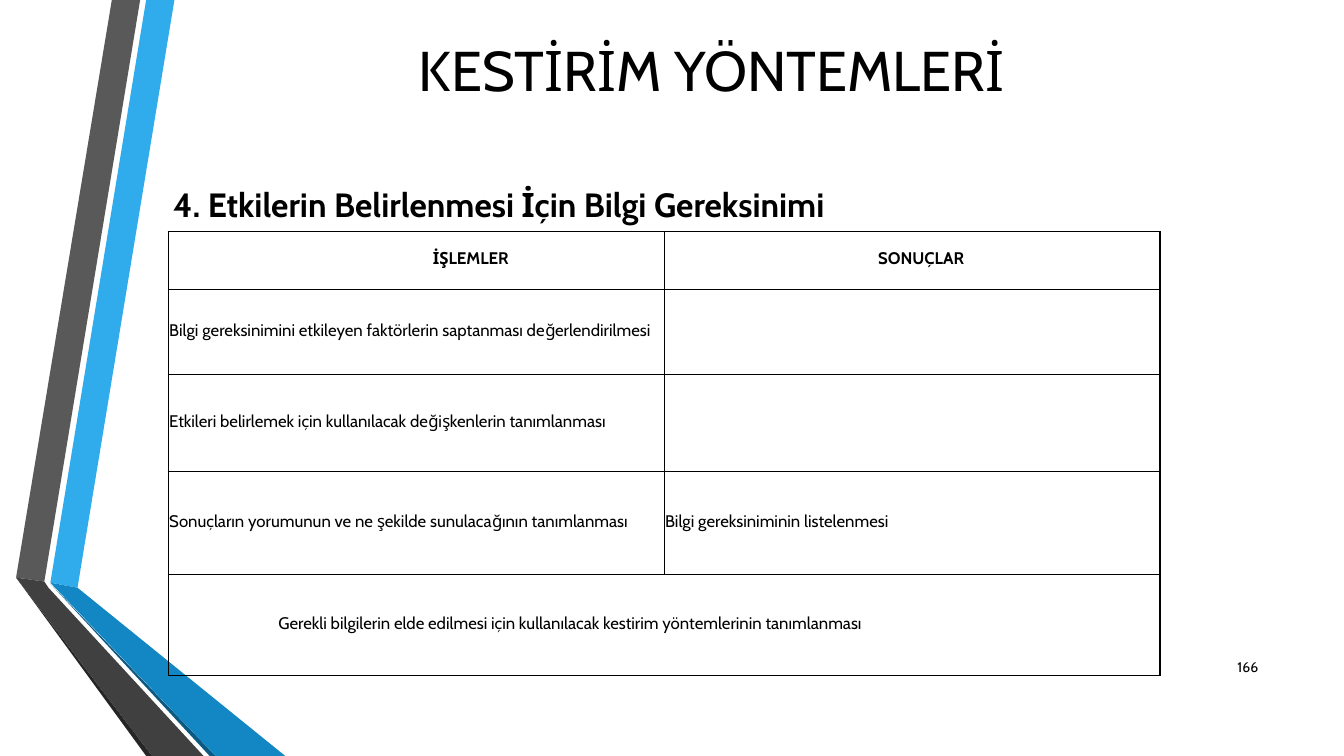
from dataclasses import dataclass

from lxml import etree
from pptx import Presentation
from pptx.dml.color import RGBColor
from pptx.enum.text import MSO_ANCHOR, PP_ALIGN
from pptx.oxml.ns import qn
from pptx.slide import Slide
from pptx.table import _Cell
from pptx.text.text import _Paragraph
from pptx.util import Pt

MIDDLE = MSO_ANCHOR.MIDDLE
LEFT, CENTER, RIGHT = PP_ALIGN.LEFT, PP_ALIGN.CENTER, PP_ALIGN.RIGHT
JUSTIFY = PP_ALIGN.JUSTIFY

BLACK = RGBColor(0x00, 0x00, 0x00)
SKY = RGBColor(0x30, 0xAC, 0xEC)
BLUE = RGBColor(0x12, 0x87, 0xC3)
NAVY = RGBColor(0x0C, 0x5A, 0x82)
GRAY = RGBColor(0x59, 0x59, 0x59)
CHARCOAL = RGBColor(0x40, 0x40, 0x40)
DARK = RGBColor(0x26, 0x26, 0x26)

FONT = "Cabin"
SLIDE_WIDTH, SLIDE_HEIGHT = 960, 540
TABLE_LEFT, TABLE_TOP = 120.2, 165.6
COLUMN_WIDTH = 354.2
ROW_HEIGHTS = [41, 61.2, 69.1, 73.4, 72]
CELL_INSET = 0.7


@dataclass(frozen=True)
class Ribbon:
    color: RGBColor
    points: list[tuple[float, float]]


@dataclass(frozen=True)
class Label:
    text: str
    left: float
    top: float
    width: float
    height: float
    size: float
    align: PP_ALIGN = LEFT
    bold: bool = False


@dataclass(frozen=True)
class Entry:
    row: int
    column: int
    text: str
    align: PP_ALIGN = LEFT
    indent: float = 0
    line: float = 12.2
    bold: bool = False


RIBBONS = [
    Ribbon(SKY, [(36, 416.2), (55.4, 419.8), (124.6, 0), (104.4, 0)]),
    Ribbon(GRAY, [(100.1, 0), (79.9, 0), (11.5, 412.6), (31.7, 415.4)]),
    Ribbon(DARK, [(11.5, 412.6), (104.4, 540), (108.7, 540)]),
    Ribbon(NAVY, [(36, 416.9), (149.8, 540), (154.1, 540)]),
    Ribbon(BLUE, [(36, 416.2), (154.1, 540), (203.8, 540), (55.4, 419.8)]),
    Ribbon(CHARCOAL, [(145.4, 540), (34.6, 419.8), (31.7, 415.4),
                      (11.5, 412.6), (108.7, 540)]),
]

LABELS = [
    Label("KESTİRİM YÖNTEMLERİ", 113.8, 18.7, 789.1, 61.2, 40, CENTER),
    Label("4. Etkilerin Belirlenmesi İçin Bilgi Gereksinimi",
          116.6, 127, 789.1, 38, 24, bold=True),
    Label("166", 862.6, 462.2, 43.2, 28.8, 10, RIGHT),
]

ENTRIES = [
    Entry(0, 0, "İŞLEMLER", CENTER, 78, bold=True),
    Entry(0, 1, "SONUÇLAR", CENTER, 13, bold=True),
    Entry(1, 0, "Bilgi gereksinimini etkileyen faktörlerin saptanması "
          "değerlendirilmesi", JUSTIFY, line=12),
    Entry(2, 0, "Etkileri belirlemek için kullanılacak değişkenlerin "
          "tanımlanması", JUSTIFY, line=12),
    Entry(3, 0, "Sonuçların yorumunun ve ne şekilde sunulacağının "
          "tanımlanması", JUSTIFY, line=12.5),
    Entry(3, 1, "Bilgi gereksiniminin listelenmesi"),
    Entry(4, 0, "Gerekli bilgilerin elde edilmesi için kullanılacak kestirim "
          "yöntemlerinin tanımlanması", indent=78),
]


def style_paragraph(paragraph: _Paragraph, text: str, size: float,
                    align: PP_ALIGN, bold: bool) -> None:
    paragraph.text = text
    paragraph.alignment = align
    paragraph.font.name = FONT
    paragraph.font.size = Pt(size)
    paragraph.font.bold = bold
    paragraph.font.color.rgb = BLACK


def add_ribbon(slide: Slide, ribbon: Ribbon) -> None:
    start, *rest = [(Pt(x), Pt(y)) for x, y in ribbon.points]
    builder = slide.shapes.build_freeform(*start)
    builder.add_line_segments(rest, close=True)
    shape = builder.convert_to_shape()
    shape.shadow.inherit = False
    shape.fill.solid()
    shape.fill.fore_color.rgb = ribbon.color
    shape.line.fill.background()


def add_label(slide: Slide, label: Label) -> None:
    box = slide.shapes.add_textbox(Pt(label.left), Pt(label.top),
                                   Pt(label.width), Pt(label.height))
    frame = box.text_frame
    frame.word_wrap = True
    frame.vertical_anchor = MIDDLE
    style_paragraph(frame.paragraphs[0], label.text, label.size,
                    label.align, label.bold)


def style_cell(cell: _Cell) -> None:
    cell.fill.background()
    cell.vertical_anchor = MIDDLE
    cell.margin_left = cell.margin_right = Pt(CELL_INSET)
    cell.margin_top = cell.margin_bottom = 0
    # Borders come before the fill in the cell properties
    properties = cell._tc.get_or_add_tcPr()
    for position, side in enumerate(("a:lnL", "a:lnR", "a:lnT", "a:lnB")):
        border = etree.Element(qn(side), w=str(Pt(1)))
        fill = etree.SubElement(border, qn("a:solidFill"))
        etree.SubElement(fill, qn("a:srgbClr"), val=str(BLACK))
        properties.insert(position, border)


def add_process_table(slide: Slide) -> None:
    frame = slide.shapes.add_table(
        len(ROW_HEIGHTS), 2, Pt(TABLE_LEFT), Pt(TABLE_TOP),
        Pt(2 * COLUMN_WIDTH), Pt(sum(ROW_HEIGHTS)))
    table = frame.table
    table.first_row = table.horz_banding = False
    for column in table.columns:
        column.width = Pt(COLUMN_WIDTH)
    for row, height in zip(table.rows, ROW_HEIGHTS):
        row.height = Pt(height)
        for cell in row.cells:
            style_cell(cell)
    table.cell(4, 0).merge(table.cell(4, 1))
    for entry in ENTRIES:
        cell = table.cell(entry.row, entry.column)
        cell.margin_left = Pt(CELL_INSET + entry.indent)
        paragraph = cell.text_frame.paragraphs[0]
        style_paragraph(paragraph, entry.text, 12, entry.align, entry.bold)
        paragraph.line_spacing = Pt(entry.line)


def main() -> None:
    presentation = Presentation()
    presentation.slide_width = Pt(SLIDE_WIDTH)
    presentation.slide_height = Pt(SLIDE_HEIGHT)
    slide = presentation.slides.add_slide(presentation.slide_layouts[6])

    # Folded ribbons on the left edge
    for ribbon in RIBBONS:
        add_ribbon(slide, ribbon)

    # Title, heading and page number
    for label in LABELS:
        add_label(slide, label)

    # Operations and results
    add_process_table(slide)
    presentation.save("out.pptx")


if __name__ == "__main__":
    main()
